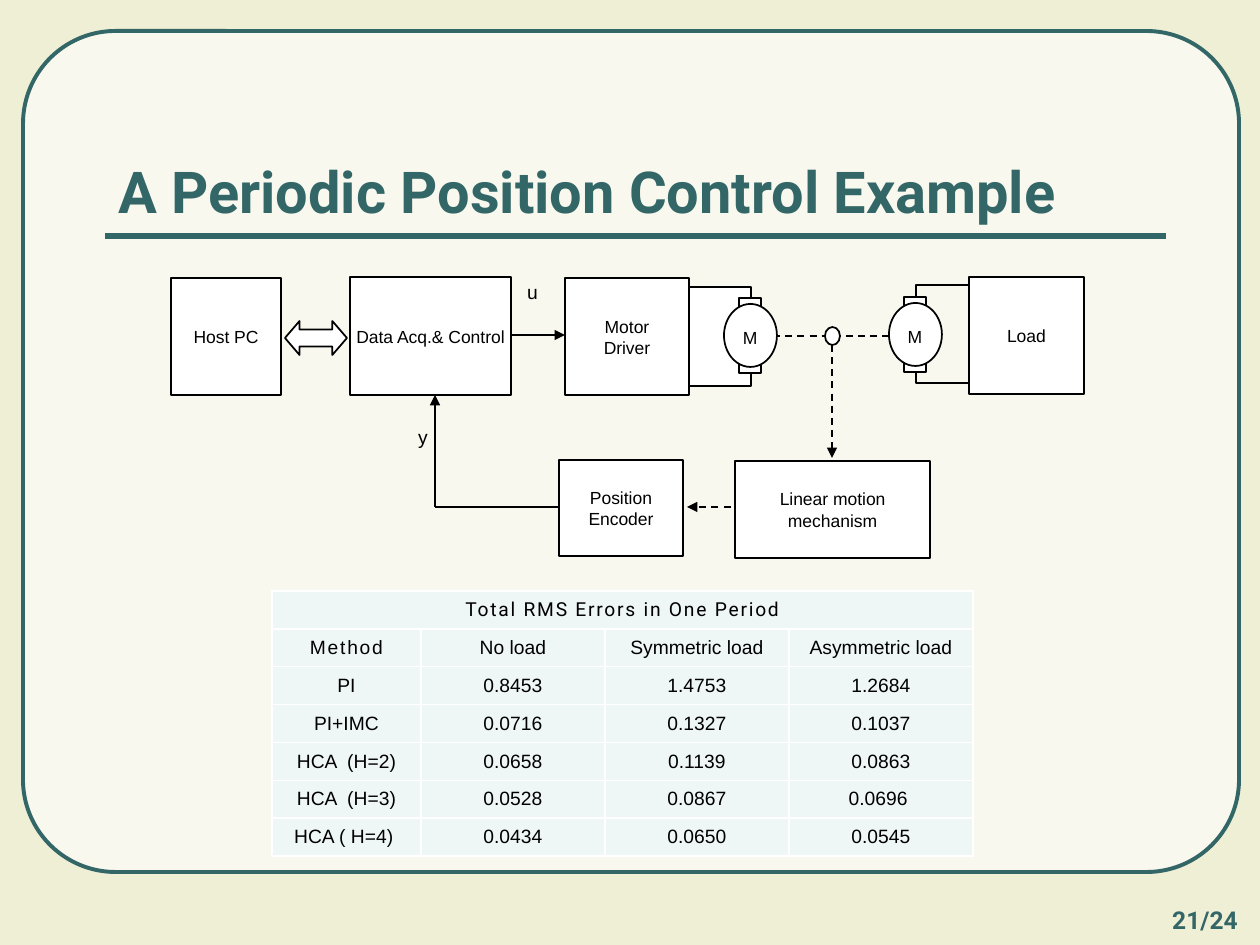
from lxml import etree
from pptx import Presentation
from pptx.dml.color import RGBColor
from pptx.enum.dml import MSO_LINE
from pptx.enum.shapes import MSO_CONNECTOR, MSO_SHAPE
from pptx.enum.text import MSO_ANCHOR, PP_ALIGN
from pptx.oxml.ns import qn
from pptx.util import Emu, Pt

PX = 914400 / 126

CREAM = RGBColor(0xEF, 0xEF, 0xD5)
IVORY = RGBColor(0xF8, 0xF8, 0xEE)
TEAL = RGBColor(0x33, 0x66, 0x66)
PALE = RGBColor(0xEF, 0xF6, 0xF6)
BLACK = RGBColor(0, 0, 0)
WHITE = RGBColor(0xFF, 0xFF, 0xFF)

RECT, OVAL = MSO_SHAPE.RECTANGLE, MSO_SHAPE.OVAL
ROUND_RECT = MSO_SHAPE.ROUNDED_RECTANGLE
DOUBLE_ARROW = MSO_SHAPE.LEFT_RIGHT_ARROW
STRAIGHT = MSO_CONNECTOR.STRAIGHT
DASH = MSO_LINE.DASH
LEFT, CENTER = PP_ALIGN.LEFT, PP_ALIGN.CENTER
TOP, MIDDLE, BOTTOM = MSO_ANCHOR.TOP, MSO_ANCHOR.MIDDLE, MSO_ANCHOR.BOTTOM

BLOCKS = [
    ("Host PC", (171, 278, 110, 117)),
    ("Data Acq.& Control", (350, 277, 161, 118)),
    ("Motor\nDriver", (565, 278, 124, 117)),
    ("Load", (969, 277, 115, 117)),
    ("Position Encoder", (559, 460, 124, 96)),
    ("Linear motion mechanism", (735, 461, 195, 97)),
]
TABLE_TITLE = "Total RMS Errors in One Period"
TABLE_ROWS = [
    ("Method", "No load", "Symmetric load", "Asymmetric load"),
    ("PI", "0.8453", "1.4753", "1.2684"),
    ("PI+IMC", "0.0716", "0.1327", "0.1037"),
    ("HCA  (H=2)", "0.0658", "0.1139", "0.0863"),
    ("HCA  (H=3)", "0.0528", "0.0867", "0.0696 "),
    ("HCA ( H=4) ", "0.0434", "0.0650", "0.0545"),
]
COLUMN_WIDTHS = (149, 184, 184, 184)


def px(*lengths):
    return [Emu(round(length * PX)) for length in lengths]


def write(frame, text, *, size=10, font="Arial", color=BLACK, bold=False,
          align=CENTER, spacing=0):
    """Put text in a frame, one paragraph per line; spacing is in points."""
    for index, line in enumerate(text.split("\n")):
        para = frame.add_paragraph() if index else frame.paragraphs[0]
        para.alignment = align
        span = para.add_run()
        span.text = line
        span.font.size = Pt(size)
        span.font.name = font
        span.font.bold = bold
        span.font.color.rgb = color
        if spacing:
            span.font._element.set("spc", str(spacing * 100))


def set_frame(frame, anchor, inset=0):
    frame.word_wrap = True
    frame.vertical_anchor = anchor
    frame.margin_left, frame.margin_right = px(inset, inset)
    frame.margin_top, frame.margin_bottom = px(0, 0)


def add_figure(page, kind, box, *, fill=WHITE, color=BLACK, width=1):
    figure = page.shapes.add_shape(kind, *px(*box))
    figure.shadow.inherit = False
    if fill is None:
        figure.fill.background()
    else:
        figure.fill.solid()
        figure.fill.fore_color.rgb = fill
    figure.line.color.rgb = color
    figure.line.width = Pt(width)
    return figure


def add_block(page, text, box):
    block = add_figure(page, RECT, box)
    set_frame(block.text_frame, MIDDLE)
    write(block.text_frame, text)


def add_label(page, text, box, anchor=TOP, **style):
    label = page.shapes.add_textbox(*px(*box))
    set_frame(label.text_frame, anchor)
    write(label.text_frame, text, **style)


def add_line(page, start, end, *, color=BLACK, width=1, dashed=False, arrow=False):
    link = page.shapes.add_connector(STRAIGHT, *px(*start, *end))
    link.line.color.rgb = color
    link.line.width = Pt(width)
    if dashed:
        link.line.dash_style = DASH
    if arrow:
        etree.SubElement(link.line._get_or_add_ln(), qn("a:tailEnd"), type="triangle")
    etree.SubElement(link._element.spPr, qn("a:effectLst"))


def add_motor(page, left, top):
    """Draw a motor: terminals behind a circle marked M."""
    add_figure(page, RECT, (left + 15, top - 6, 22, 75))
    add_figure(page, OVAL, (left, top, 53, 63))
    add_label(page, "M", (left + 10, top + 14, 32, 39), MIDDLE)


def add_title(page, text):
    title = page.shapes.title
    title.left, title.top, title.width, title.height = px(105, 73, 1061, 158)
    set_frame(title.text_frame, BOTTOM, inset=13)
    title.text_frame.margin_bottom = px(6)[0]
    write(title.text_frame, text, size=33, font="Roboto", color=TEAL, bold=True,
          align=LEFT)


def add_diagram(page):
    add_figure(page, RECT, (662, 287, 89, 99))
    add_figure(page, RECT, (916, 285, 95, 98), fill=None)
    add_line(page, (503, 335), (565, 335), arrow=True)
    add_line(page, (591, 507), (435, 507))
    add_line(page, (435, 507), (435, 395), arrow=True)
    add_line(page, (761, 336), (902, 336), dashed=True)
    add_line(page, (767, 507), (687, 507), dashed=True, arrow=True)
    add_line(page, (832, 345), (832, 458), dashed=True, arrow=True)
    add_figure(page, OVAL, (825, 327, 15, 18))
    for left, top in ((724, 304), (889, 303)):
        add_motor(page, left, top)
    for text, box in BLOCKS:
        add_block(page, text, box)
    arrow = add_figure(page, DOUBLE_ARROW, (285, 321, 62, 34))
    arrow.adjustments[1] = 0.43
    add_label(page, "u", (527, 280, 30, 45), size=11, align=LEFT)
    add_label(page, "y", (405, 425, 36, 45), size=11)


def set_cell_borders(cell):
    props = cell._tc.get_or_add_tcPr()
    for position, side in enumerate(("lnL", "lnR", "lnT", "lnB")):
        border = etree.Element(qn(f"a:{side}"), w=str(Pt(1)))
        fill = etree.SubElement(border, qn("a:solidFill"))
        etree.SubElement(fill, qn("a:srgbClr"), val=str(WHITE))
        props.insert(position, border)


def add_error_table(page):
    rows = [(TABLE_TITLE, "", "", "")] + TABLE_ROWS
    box = px(272, 591, sum(COLUMN_WIDTHS), 265)
    table = page.shapes.add_table(len(rows), len(COLUMN_WIDTHS), *box).table
    for column, width in zip(table.columns, px(*COLUMN_WIDTHS)):
        column.width = width
    table.cell(0, 0).merge(table.cell(0, len(COLUMN_WIDTHS) - 1))
    for r, values in enumerate(rows):
        for c, value in enumerate(values):
            cell = table.cell(r, c)
            cell.fill.solid()
            cell.fill.fore_color.rgb = PALE
            set_cell_borders(cell)
            cell.vertical_anchor = MIDDLE
            cell.margin_left, cell.margin_right = px(6, 6)
            cell.margin_top, cell.margin_bottom = px(0, 0)
            if value:
                write(cell.text_frame, value, size=11,
                      font="Arial" if r else "Roboto",
                      spacing=1 if value in (TABLE_TITLE, "Method") else 0)


def main():
    deck = Presentation()
    deck.slide_width, deck.slide_height = px(1260, 945)
    page = deck.slides.add_slide(deck.slide_layouts[5])
    page.background.fill.solid()
    page.background.fill.fore_color.rgb = CREAM

    panel = add_figure(page, ROUND_RECT, (23, 31, 1216, 841), fill=IVORY,
                       color=TEAL, width=2.25)
    panel.adjustments[0] = 0.11
    # The title placeholder comes first, so the panel has to go behind it.
    page.shapes.title._element.addprevious(panel._element)
    add_line(page, (105, 236), (1166, 236), color=TEAL, width=3)
    add_title(page, "A Periodic Position Control Example")
    add_label(page, "21/24", (1150, 905, 110, 40), size=14, font="Roboto",
              color=TEAL, bold=True)
    add_diagram(page)
    add_error_table(page)
    deck.save("out.pptx")


if __name__ == "__main__":
    main()
